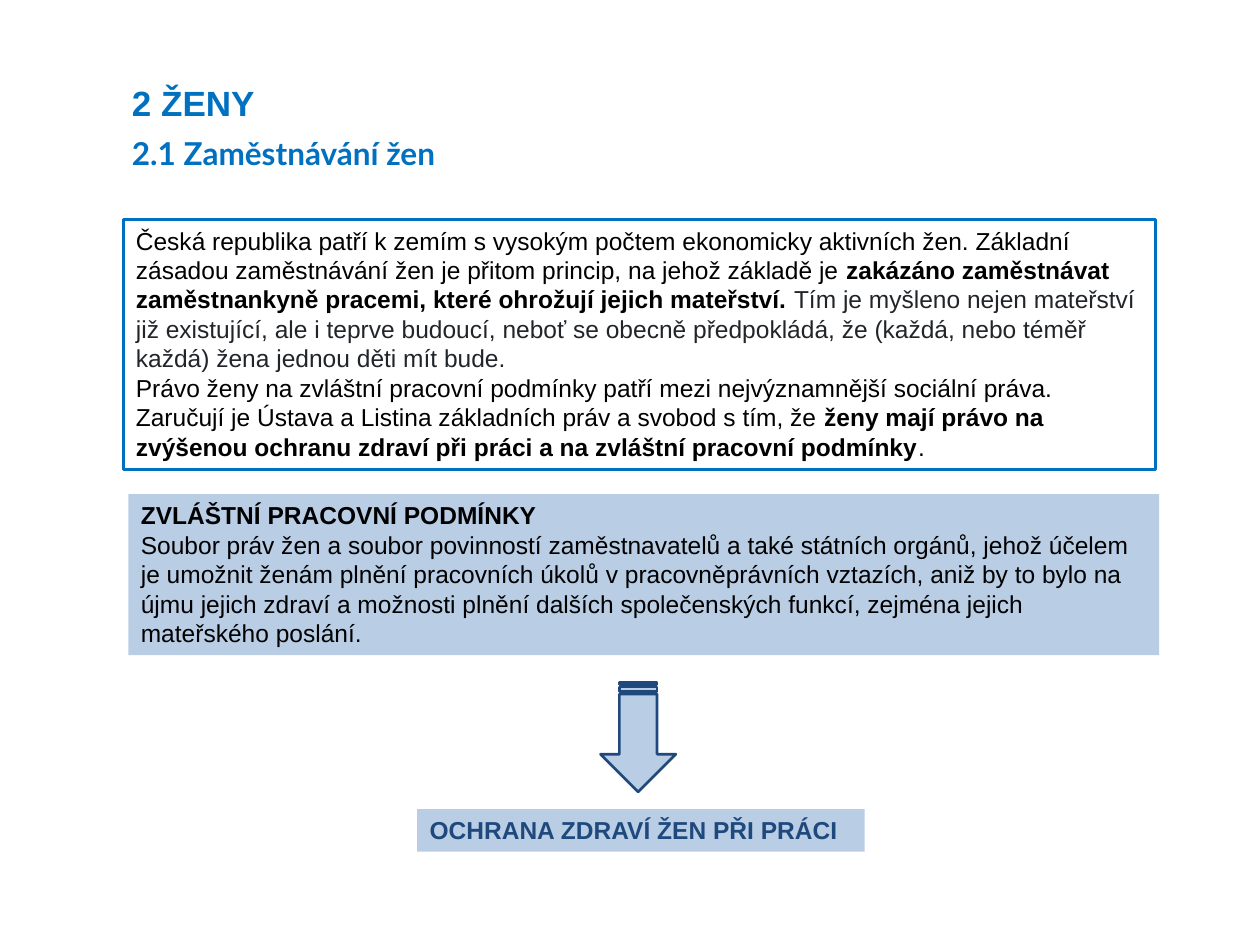
from pptx import Presentation
from pptx.dml.color import RGBColor
from pptx.enum.shapes import MSO_SHAPE
from pptx.enum.text import MSO_ANCHOR, MSO_AUTO_SIZE, PP_ALIGN
from pptx.util import Cm, Pt

RECT, ARROW = MSO_SHAPE.RECTANGLE, MSO_SHAPE.STRIPED_RIGHT_ARROW
TOP, NO_FIT = MSO_ANCHOR.TOP, MSO_AUTO_SIZE.NONE
LEFT, JUSTIFY = PP_ALIGN.LEFT, PP_ALIGN.JUSTIFY

COLORS = {
    "heading": "0070C0",
    "text": "000000",
    "muted": "212529",
    "panel": "B9CDE5",
    "navy": "1F497D",
}

# Paragraphs are lists of runs: (text, bold, colour)
INTRO = [
    [("Česká republika patří k zemím s vysokým počtem ekonomicky aktivních žen. "
      "Základní zásadou zaměstnávání žen je přitom princip, na jehož základě je ",
      False, "text"),
     ("zakázáno zaměstnávat zaměstnankyně pracemi, které ohrožují jejich "
      "mateřství. ", True, "text"),
     ("Tím je myšleno nejen mateřství již existující, ale i teprve budoucí, "
      "neboť se obecně předpokládá, že (každá, nebo téměř každá) žena jednou "
      "děti mít bude.", False, "muted")],
    [("Právo ženy na zvláštní pracovní podmínky patří mezi nejvýznamnější "
      "sociální práva. Zaručují je Ústava a Listina základních práv a svobod "
      "s tím, že ", False, "text"),
     ("ženy mají právo na zvýšenou ochranu zdraví při práci a na zvláštní "
      "pracovní podmínky", True, "text"),
     (".", False, "text")],
]
CONDITIONS = [
    [("ZVLÁŠTNÍ PRACOVNÍ PODMÍNKY", True, "text")],
    [("Soubor práv žen a soubor povinností zaměstnavatelů a také státních "
      "orgánů, jehož účelem je umožnit ženám plnění pracovních úkolů "
      "v pracovněprávních vztazích, aniž by to bylo na újmu jejich zdraví "
      "a možnosti plnění dalších společenských funkcí, zejména jejich "
      "mateřského poslání.", False, "text")],
]
PROTECTION = [[("OCHRANA ZDRAVÍ ŽEN PŘI PRÁCI", True, "navy")]]


def rgb(name):
    return RGBColor.from_string(COLORS[name])


def add_text(sp, paragraphs, size=14, font="Arial", align=LEFT, wrap=True):
    tf = sp.text_frame
    tf.word_wrap = wrap
    tf.auto_size = NO_FIT
    tf.vertical_anchor = TOP
    tf.margin_left = tf.margin_right = Cm(0.25)
    tf.margin_top = tf.margin_bottom = Cm(0.13)
    for i, runs in enumerate(paragraphs):
        p = tf.add_paragraph() if i else tf.paragraphs[0]
        p.alignment = align
        p.space_before = Pt(0)
        for text, bold, color in runs:
            r = p.add_run()
            r.text = text
            r.font.name = font
            r.font.size = Pt(size)
            r.font.bold = bold
            r.font.color.rgb = rgb(color)


def add_heading(sp, box, text, size, font):
    sp.left, sp.top, sp.width, sp.height = (Cm(v) for v in box)
    add_text(sp, [[(text, True, "heading")]], size, font, JUSTIFY, wrap=False)


def add_shape(s, kind, box, fill=None, line=None):
    sp = s.shapes.add_shape(kind, *(Cm(v) for v in box))
    sp.shadow.inherit = False
    if fill:
        sp.fill.solid()
        sp.fill.fore_color.rgb = rgb(fill)
    else:
        sp.fill.background()
    if line:
        sp.line.color.rgb = rgb(line)
        sp.line.width = Pt(1.5)
    else:
        sp.line.fill.background()
    return sp


def main():
    prs = Presentation()
    prs.slide_width, prs.slide_height = Cm(25.4), Cm(19.05)
    s = prs.slides.add_slide(prs.slide_layouts[5])

    # Headings
    add_heading(s.shapes.title, (2.41, 1.52, 3.02, 1.12), "2 ŽENY", 20, "Arial")
    subtitle = s.shapes.add_textbox(0, 0, 0, 0)
    add_heading(subtitle, (2.41, 2.57, 7.09, 1.02),
                "2.1 Zaměstnávání žen", 18, "Lato")

    # Text panels
    add_text(add_shape(s, RECT, (2.49, 4.42, 20.8, 5.05), line="heading"), INTRO)
    add_text(add_shape(s, RECT, (2.59, 9.96, 20.78, 3.25), "panel"), CONDITIONS)
    add_text(add_shape(s, RECT, (8.41, 16.31, 9.02, 0.86), "panel"), PROTECTION)

    # Arrow pointing down to the conclusion
    arrow = add_shape(s, ARROW, (11.76, 14.1, 2.21, 1.52), "panel", "navy")
    arrow.rotation = 90

    prs.save("out.pptx")


if __name__ == "__main__":
    main()
